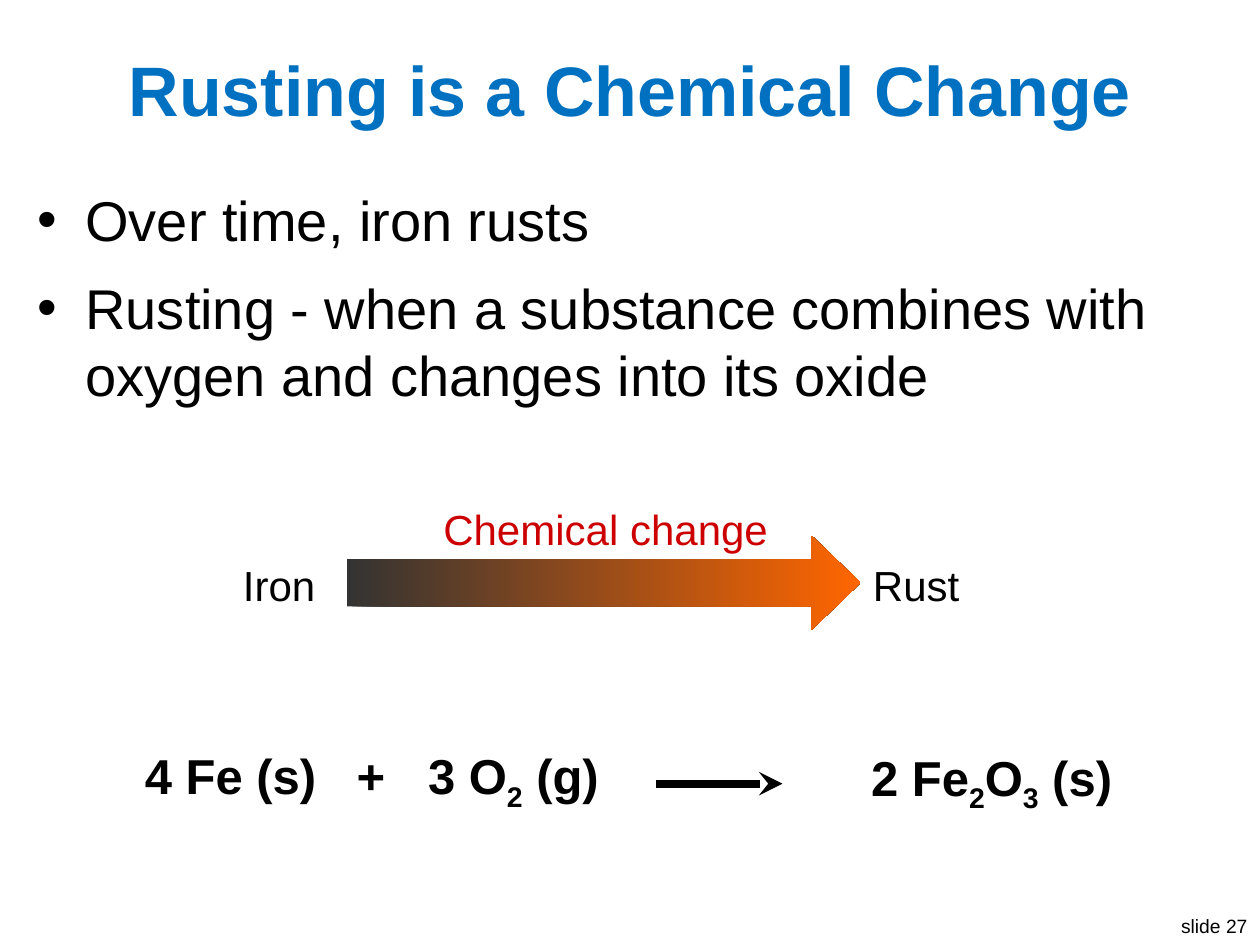
from dataclasses import dataclass

from lxml.etree import SubElement
from pptx import Presentation
from pptx.dml.color import RGBColor
from pptx.enum.shapes import MSO_CONNECTOR as Connector, MSO_SHAPE as Shape
from pptx.enum.text import MSO_ANCHOR as Anchor, PP_ALIGN as Align
from pptx.oxml.ns import qn
from pptx.util import Inches, Pt


@dataclass(frozen=True)
class Theme:
    font: str = "Arial"
    text: str = "000000"
    title: str = "0070C0"
    accent: str = "CC0000"
    iron: str = "333333"
    rust: str = "FF6600"
    title_size: int = 40
    body_size: int = 32
    equation_size: int = 28
    label_size: int = 24
    footer_size: int = 11


class SlideBuilder:
    def __init__(self, slide, theme):
        self.slide = slide
        self.theme = theme

    def style(self, paragraph, size, color, bold=False):
        for run in paragraph.runs:
            run.font.name = self.theme.font
            run.font.size = Pt(size)
            run.font.bold = bold
            run.font.color.rgb = RGBColor.from_string(color)

    def title(self, text, left, top, width, height):
        shape = self.slide.shapes.title
        shape.left, shape.top = Inches(left), Inches(top)
        shape.width, shape.height = Inches(width), Inches(height)
        frame = shape.text_frame
        frame.text = text
        frame.vertical_anchor = Anchor.MIDDLE
        frame.paragraphs[0].alignment = Align.CENTER
        self.style(frame.paragraphs[0], self.theme.title_size, self.theme.title, True)

    def text_box(self, text, left, top, width, height, size, color=None,
                 bold=False, align=Align.LEFT, wrap=False):
        """Add text; parts between underscores become subscripts."""
        box = self.slide.shapes.add_textbox(
            Inches(left), Inches(top), Inches(width), Inches(height))
        frame = box.text_frame
        frame.word_wrap = wrap
        paragraph = frame.paragraphs[0]
        paragraph.alignment = align
        for index, part in enumerate(text.split("_")):
            run = paragraph.add_run()
            run.text = part
            if index % 2:
                run.font._element.set("baseline", "-25000")
        self.style(paragraph, size, color or self.theme.text, bold)
        return box

    def tabbed_labels(self, labels, tab, left, top, width, height):
        box = self.text_box("\t".join(labels), left, top, width, height,
                            self.theme.label_size, wrap=True)
        properties = box.text_frame.paragraphs[0]._p.get_or_add_pPr()
        stops = SubElement(properties, qn("a:tabLst"))
        SubElement(stops, qn("a:tab"), pos=str(Inches(tab)), algn="l")

    def bullets(self, items, left, top, width, height, indent=0.38):
        box = self.slide.shapes.add_textbox(
            Inches(left), Inches(top), Inches(width), Inches(height))
        frame = box.text_frame
        frame.word_wrap = True
        frame.text = "\n".join(items)
        for paragraph in frame.paragraphs:
            paragraph.space_before = Pt(12)
            properties = paragraph._p.get_or_add_pPr()
            properties.set("marL", str(Inches(indent)))
            properties.set("indent", str(-Inches(indent)))
            SubElement(properties, qn("a:buFont"), typeface=self.theme.font)
            SubElement(properties, qn("a:buChar"), char="•")
            self.style(paragraph, self.theme.body_size, self.theme.text)

    def gradient_arrow(self, left, top, width, height, colors):
        arrow = self.slide.shapes.add_shape(
            Shape.RIGHT_ARROW, Inches(left), Inches(top), Inches(width), Inches(height))
        arrow.shadow.inherit = False
        arrow.adjustments[1] = 0.52
        arrow.line.fill.background()
        arrow.fill.gradient()
        arrow.fill.gradient_angle = 0
        for stop, color in zip(arrow.fill.gradient_stops, colors):
            stop.color.rgb = RGBColor.from_string(color)

    def reaction_arrow(self, left, right, y, weight=4.5):
        arrow = self.slide.shapes.add_connector(
            Connector.STRAIGHT, Inches(left), Inches(y), Inches(right), Inches(y))
        arrow.line.color.rgb = RGBColor.from_string(self.theme.text)
        arrow.line.width = Pt(weight)
        SubElement(arrow.line._get_or_add_ln(), qn("a:tailEnd"), type="stealth")
        SubElement(arrow._element.spPr, qn("a:effectLst"))


def main():
    theme = Theme()
    presentation = Presentation()
    presentation.slide_width, presentation.slide_height = Inches(10), Inches(7.5)
    slide = presentation.slides.add_slide(presentation.slide_layouts[5])
    builder = SlideBuilder(slide, theme)

    # Footer, heading and definition
    builder.text_box("slide 27", 9.25, 7.21, 0.75, 0.29, theme.footer_size,
                     align=Align.RIGHT)
    builder.title("Rusting is a Chemical Change", 0.2, 0.3, 9.6, 0.8)
    builder.bullets(
        ["Over time, iron rusts",
         "Rusting - when a substance combines with oxygen and changes into its oxide"],
        0.2, 1.42, 9.6, 2.08)

    # Balanced equation
    terms = [("4 Fe (s)", 1.04, 5.87, 1.58), ("+", 2.73, 5.87, 0.43),
             ("3 O_2_ (g)", 3.28, 5.87, 1.59), ("2 Fe_2_O_3_ (s)", 6.78, 5.88, 2.18)]
    for text, left, top, width in terms:
        builder.text_box(text, left, top, width, 0.57, theme.equation_size,
                         bold=True, align=Align.CENTER)
    builder.reaction_arrow(5.21, 6.21, 6.22)

    # Iron turning into rust
    builder.tabbed_labels(["Iron", "Rust"], 5, 1.83, 4.39, 6.5, 0.5)
    builder.gradient_arrow(2.75, 4.25, 4.08, 0.75, (theme.iron, theme.rust))
    builder.text_box("Chemical change", 3.42, 3.95, 2.94, 0.5, theme.label_size,
                     theme.accent)

    presentation.save("out.pptx")


if __name__ == "__main__":
    main()
